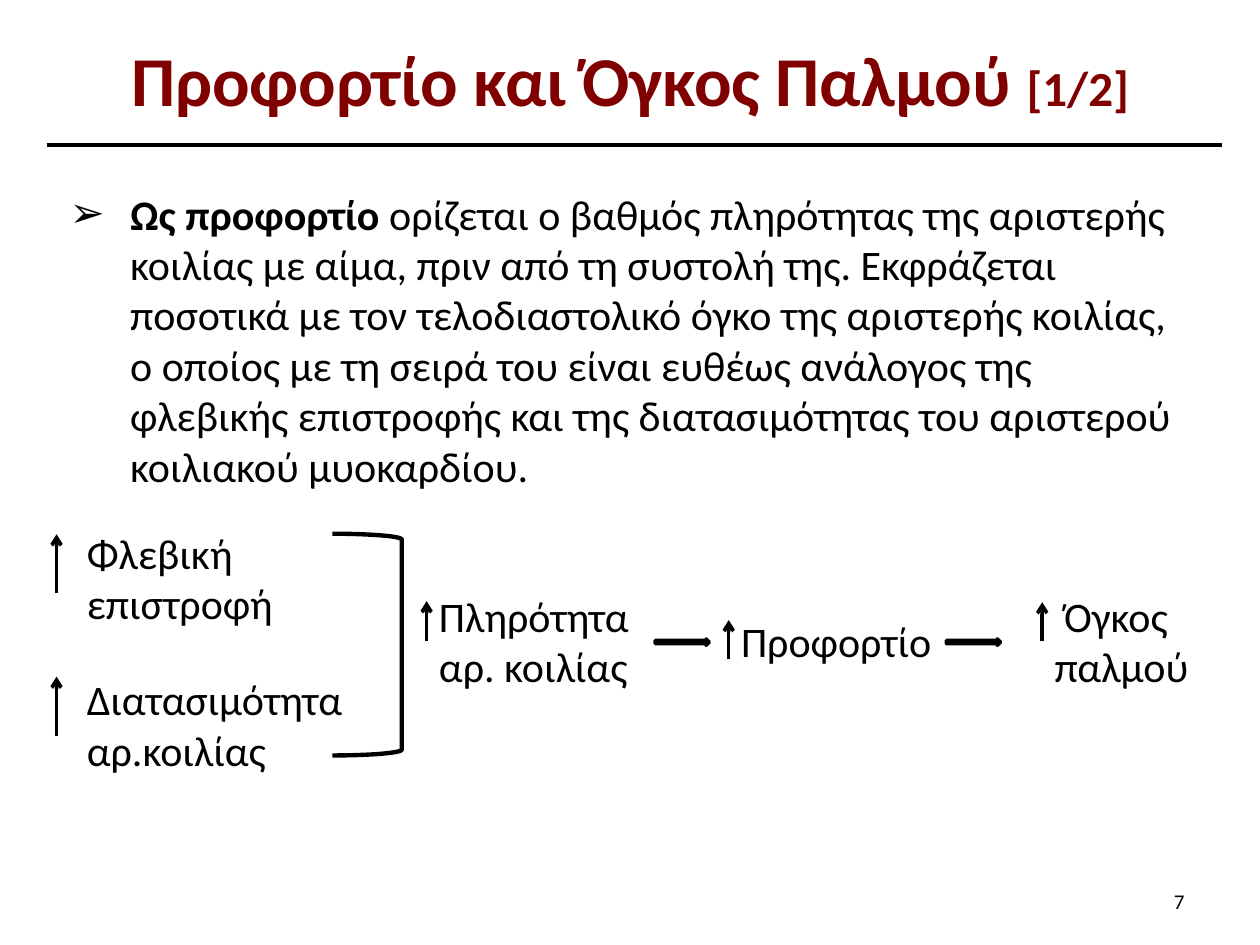
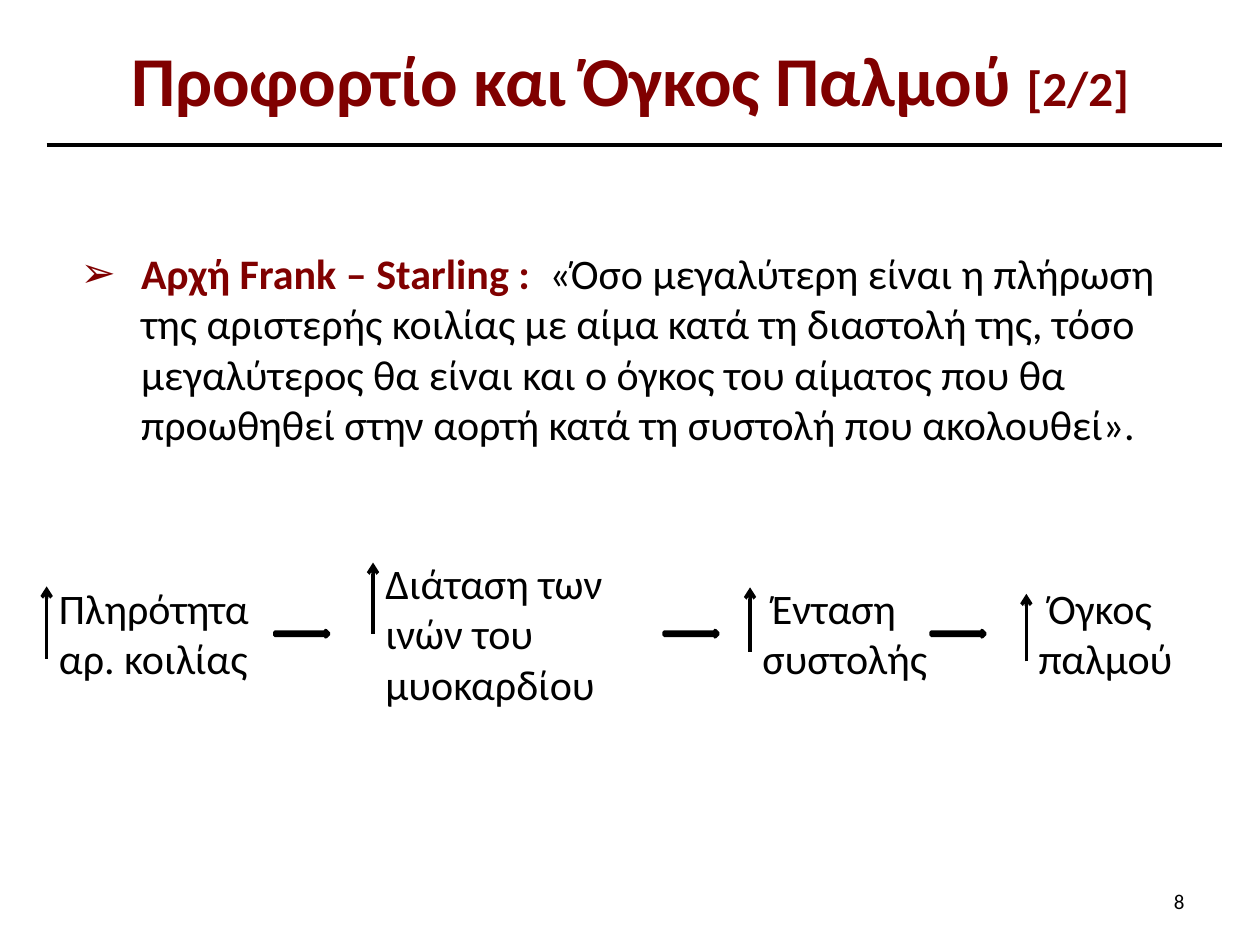
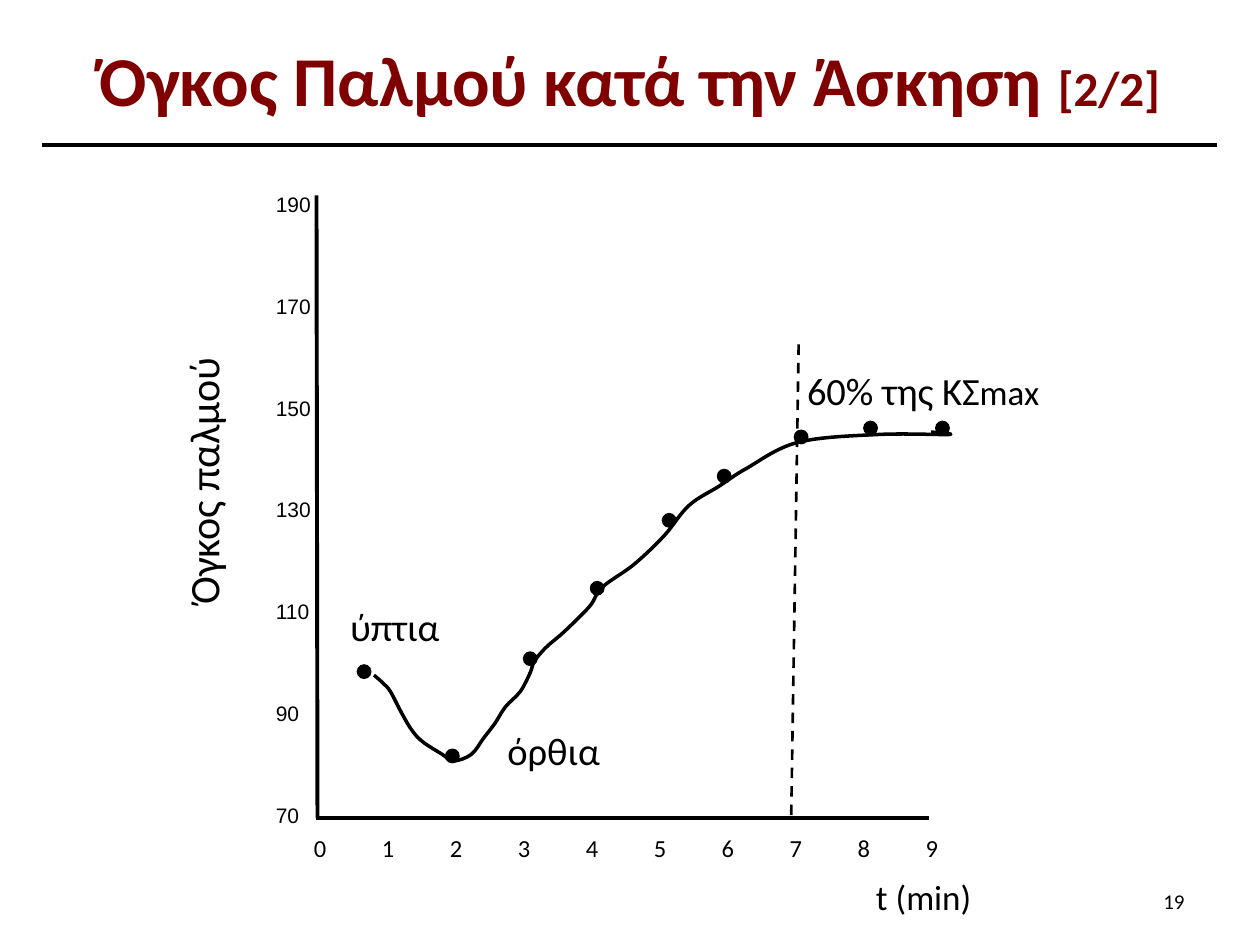
import pptx
import pptx.dml.color
import pptx.enum.dml
import pptx.enum.shapes
import pptx.enum.text
import pptx.oxml.ns
import pptx.util
from lxml import etree

Cm, Pt = pptx.util.Cm, pptx.util.Pt
Align = pptx.enum.text.PP_ALIGN
Anchor = pptx.enum.text.MSO_ANCHOR
Preset = pptx.enum.shapes.MSO_SHAPE

BLACK, MAROON, NEAR_BLACK = "000000", "800000", "0D0D0D"
TITLE_ONLY, TITLE_AND_BODY = 5, 1
PAGE_WIDTH, PAGE_HEIGHT = 25.4, 19.05
RULE_WIDTH = 23.7

CURVE = [
    (7.54, 13.61), (7.72, 13.77), (7.87, 13.94), (8.1, 14.38), (8.31, 14.73),
    (8.53, 14.96), (8.92, 15.21), (9.14, 15.34), (9.5, 15.21), (9.75, 14.88),
    (9.98, 14.58), (10.19, 14.25), (10.49, 13.94), (10.69, 13.56),
    (10.77, 13.34), (11, 13.06), (11.38, 12.73), (11.89, 12.22),
    (12.14, 11.84), (12.78, 11.38), (13.39, 10.8), (13.89, 10.19),
    (14.5, 9.8), (15.04, 9.45), (16.08, 8.92), (17.7, 8.76),
    (19.13, 8.76), (18.77, 8.71),
]
DOTS = [
    (7.19, 13.39), (8.97, 15.09), (10.54, 13.13), (11.89, 11.71),
    (13.34, 10.34), (14.45, 9.45), (16, 8.66), (17.4, 8.48), (18.85, 8.48),
]


def rgb(value):
    return pptx.dml.color.RGBColor.from_string(value)


def add_xml(parent, name, **attributes):
    return etree.SubElement(parent, pptx.oxml.ns.qn(name), attributes)


def add_span(para, text, size, color=BLACK, bold=False, font="Calibri"):
    span = para.add_run()
    span.text = text
    span.font.name = font
    span.font.size = Pt(size)
    span.font.bold = bold
    span.font.color.rgb = rgb(color)


def place(shape, left, top, width, height):
    shape.left, shape.top = Cm(left), Cm(top)
    shape.width, shape.height = Cm(width), Cm(height)


def add_box(page, left, top, width, height):
    box = page.shapes.add_textbox(Cm(left), Cm(top), Cm(width), Cm(height))
    box.text_frame.word_wrap = True
    return box


def add_text(page, text, left, top, width, height, size=24):
    box = add_box(page, left, top, width, height)
    add_span(box.text_frame.paragraphs[0], text, size)
    return box


def add_line(page, start, end, width=2.25, arrow=False, dashed=False):
    line = page.shapes.add_connector(
        pptx.enum.shapes.MSO_CONNECTOR.STRAIGHT,
        *(Cm(value) for value in (*start, *end)))
    line.line.color.rgb = rgb(BLACK)
    line.line.width = Pt(width)
    if dashed:
        line.line.dash_style = pptx.enum.dml.MSO_LINE.DASH
    if arrow:
        add_xml(line.line._get_or_add_ln(), "a:tailEnd", type="arrow")
    add_xml(line._element.spPr, "a:effectLst")


def style_shape(shape, fill=None, line_width=None):
    shape.shadow.inherit = False
    if fill:
        shape.fill.solid()
        shape.fill.fore_color.rgb = rgb(fill)
    else:
        shape.fill.background()
    if line_width:
        shape.line.color.rgb = rgb(BLACK)
        shape.line.width = Pt(line_width)
    else:
        shape.line.fill.background()


def add_preset(page, preset, left, top, width, height, **style):
    shape = page.shapes.add_shape(preset, Cm(left), Cm(top), Cm(width), Cm(height))
    style_shape(shape, **style)


def add_page(deck, layout, title, part, number, title_width=23.6, rule_left=0.94):
    """Start a page with its title, the rule below it and the page number."""
    page = deck.slides.add_slide(deck.slide_layouts[layout])
    heading = page.shapes.title
    place(heading, (PAGE_WIDTH - title_width) / 2, 0.33, title_width, 2.51)
    frame = heading.text_frame
    frame.auto_size = pptx.enum.text.MSO_AUTO_SIZE.NONE
    frame.vertical_anchor = Anchor.MIDDLE
    para = frame.paragraphs[0]
    para.alignment = Align.CENTER
    add_span(para, title + " ", 40, MAROON, bold=True)
    add_span(para, part, 28, MAROON, bold=True)
    add_line(page, (rule_left, 2.92), (rule_left + RULE_WIDTH, 2.92))
    number_box = add_text(page, number, 18.21, 17.65, 5.92, 1.02, size=12)
    number_box.text_frame.vertical_anchor = Anchor.MIDDLE
    number_box.text_frame.paragraphs[0].alignment = Align.RIGHT
    return page


def fill_body(page, lead, rest, lead_color, left, top, height, margin_top=0.13):
    """Write one bulleted paragraph that opens with a bold phrase."""
    body = page.placeholders[1]
    place(body, left, top, 22.86, height)
    body.text_frame.auto_size = pptx.enum.text.MSO_AUTO_SIZE.NONE
    body.text_frame.margin_top = Cm(margin_top)
    para = body.text_frame.paragraphs[0]
    para.space_before = Pt(0)
    properties = para._p.get_or_add_pPr()
    properties.set("marL", str(Cm(1.22)))
    properties.set("indent", str(-Cm(1.22)))
    add_xml(properties, "a:buChar", char="➢")
    add_span(para, lead, 24, lead_color, bold=True)
    add_span(para, rest, 24)


def add_factor(page, text, left, top, width, arrow_bottom, arrow_top,
               lines=2, arrow_gap=0):
    """Label a factor and put the arrow for its increase at its left."""
    arrow_left = left - arrow_gap
    add_line(page, (arrow_left, arrow_bottom), (arrow_left, arrow_top),
             width=2, arrow=True)
    add_text(page, text, left, top, width, 0.25 + 1.03 * lines)


def add_flow_arrows(page, lefts, top):
    for left in lefts:
        add_preset(page, Preset.RIGHT_ARROW, left, top, 1.09, 0.13,
                   fill=NEAR_BLACK, line_width=2)


def add_curve(page, points):
    """Draw a smooth outline: each segment bends along its neighbours' slope."""
    knots = [(Cm(x), Cm(y)) for x, y in points]
    builder = page.shapes.build_freeform(*knots[0])
    builder.add_line_segments(knots[1:], close=False)
    shape = builder.convert_to_shape()
    style_shape(shape, line_width=2)

    padded = [knots[0], *knots, knots[-1]]
    segments = list(shape._element.iter(pptx.oxml.ns.qn("a:lnTo")))
    for segment, a, b, c, d in zip(segments, padded, padded[1:], padded[2:], padded[3:]):
        bend = etree.Element(pptx.oxml.ns.qn("a:cubicBezTo"))
        leaving = [q + (r - p) / 6 for p, q, r in zip(a, b, c)]
        arriving = [r - (s - q) / 6 for q, r, s in zip(b, c, d)]
        for x, y in (leaving, arriving, c):
            add_xml(bend, "a:pt", x=str(round(x - shape.left)),
                    y=str(round(y - shape.top)))
        segment.getparent().replace(segment, bend)


def add_volume_scale(page):
    frame = add_box(page, 5.31, 2.72, 1.47, 15.14).text_frame
    frame.margin_top = Cm(1.15)
    for value in range(190, 69, -20):
        if value == 190:
            para = frame.paragraphs[0]
        else:
            para = frame.add_paragraph()
            para.space_before = Pt(43.7)
        add_span(para, str(value), 12, font="Arial")


def add_minute_scale(page):
    frame = add_box(page, 5.82, 16.66, 14.1, 0.86).text_frame
    frame.margin_left, frame.margin_right = Cm(0.51), Cm(0)
    para = frame.paragraphs[0]
    tabs = add_xml(para._p.get_or_add_pPr(), "a:tabLst")
    for minute in range(1, 10):
        add_xml(tabs, "a:tab", pos=str(Cm(1.37 * minute)), algn="l")
    add_span(para, "\t".join(str(minute) for minute in range(10)), 14)


def add_axes(page):
    add_line(page, (6.38, 3.94), (6.4, 16.49))
    add_line(page, (6.38, 16.49), (18.72, 16.49))
    add_volume_scale(page)
    add_minute_scale(page)
    add_text(page, "t (min)", 17.41, 17.53, 2.59, 1.12, size=20)
    add_text(page, "Όγκος παλμού", 1.14, 8.86, 5.89, 1.27).rotation = 270


def build_preload(deck):
    page = add_page(deck, TITLE_AND_BODY, "Προφορτίο και Όγκος Παλμού", "[1/2]", "7")
    fill_body(
        page, "Ως προφορτίο ",
        "ορίζεται ο βαθμός πληρότητας της αριστερής κοιλίας με αίμα, πριν από "
        "τη συστολή της. Εκφράζεται ποσοτικά με τον τελοδιαστολικό όγκο της "
        "αριστερής κοιλίας, ο οποίος με τη σειρά του είναι ευθέως ανάλογος της "
        "φλεβικής επιστροφής και της διατασιμότητας του αριστερού κοιλιακού "
        "μυοκαρδίου.", BLACK, 1.15, 3.66, 6.6)
    add_factor(page, "Φλεβική επιστροφή", 1.5, 10.51, 4.8, 11.96, 10.77,
               arrow_gap=0.36)
    add_factor(page, "Διατασιμότητα αρ.κοιλίας", 1.5, 13.46, 5.99, 14.83, 13.64,
               arrow_gap=0.36)
    add_preset(page, Preset.RIGHT_BRACKET, 6.7, 10.76, 1.4, 4.47, line_width=2.5)
    add_factor(page, "Πληρότητα αρ. κοιλίας", 8.6, 11.78, 4.6, 12.93, 12.12)
    add_factor(page, "Προφορτίο", 14.69, 12.29, 4.39, 13.29, 12.5, lines=1)
    add_factor(page, " Όγκος παλμού", 21.01, 11.78, 3.61, 12.93, 12.14)
    add_flow_arrows(page, (13.21, 19.08), 12.88)


def build_frank_starling(deck):
    page = add_page(deck, TITLE_AND_BODY, "Προφορτίο και Όγκος Παλμού", "[2/2]", "8")
    fill_body(
        page, "Αρχή Frank – Starling : ",
        " «Όσο μεγαλύτερη είναι η πλήρωση της αριστερής κοιλίας με αίμα κατά τη "
        "διαστολή της, τόσο μεγαλύτερος θα είναι και ο όγκος του αίματος που θα "
        "προωθηθεί στην αορτή κατά τη συστολή που ακολουθεί».",
        MAROON, 1.37, 3.43, 6.91, margin_top=1.56)
    add_factor(page, "Πληρότητα αρ. κοιλίας", 0.94, 11.61, 4.6, 13.28, 11.82)
    add_factor(page, "Διάταση των ινών του μυοκαρδίου", 7.52, 11.11, 4.93,
               12.78, 11.34, lines=3)
    add_factor(page, " Ένταση συστολής", 15.12, 11.61, 4.19, 13.14, 11.84)
    add_factor(page, " Όγκος παλμού", 20.69, 11.61, 3.61, 13.33, 11.97)
    add_flow_arrows(page, (5.54, 13.39, 18.77), 12.71)


def build_exercise(deck):
    page = add_page(deck, TITLE_ONLY, "Όγκος Παλμού κατά την Άσκηση", "[2/2]", "19",
                    title_width=24, rule_left=0.84)
    add_axes(page)
    for left, top in DOTS:
        add_preset(page, Preset.FLOWCHART_CONNECTOR, left, top, 0.3, 0.3, fill=BLACK)
    add_text(page, "ύπτια", 6.81, 12.04, 2.79, 1.19, size=22)
    add_text(page, "όρθια", 9.98, 14.53, 2.59, 1.19, size=22)
    add_line(page, (15.95, 16.43), (16.1, 6.93), width=1.5, dashed=True)
    add_curve(page, CURVE)
    threshold = add_text(page, "60% της ΚΣ", 16.02, 7.27, 6.63, 1.19, size=22)
    add_span(threshold.text_frame.paragraphs[0], "max", 20)


def main():
    deck = pptx.Presentation()
    deck.slide_width, deck.slide_height = Cm(PAGE_WIDTH), Cm(PAGE_HEIGHT)
    build_preload(deck)
    build_frank_starling(deck)
    build_exercise(deck)
    deck.save("out.pptx")


if __name__ == "__main__":
    main()
